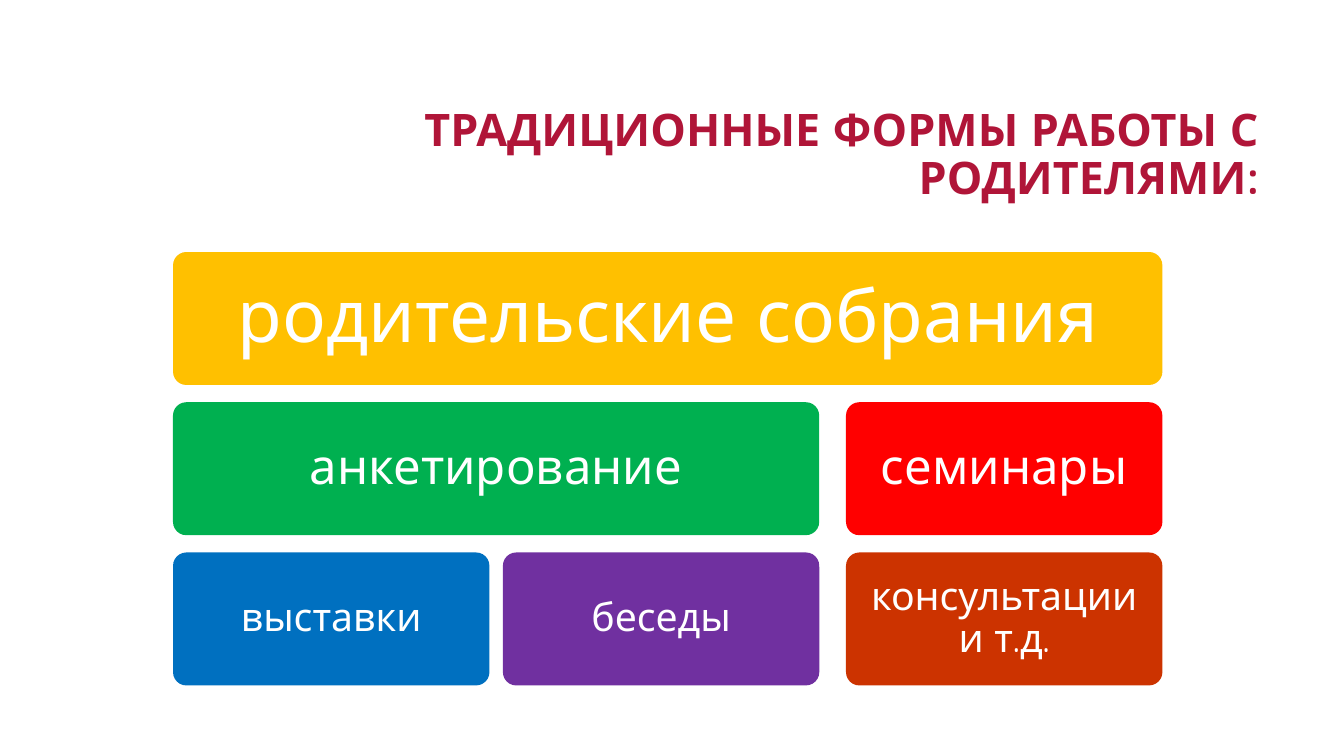
from dataclasses import dataclass

from pptx import Presentation
from pptx.dml.color import RGBColor
from pptx.enum.shapes import MSO_SHAPE
from pptx.enum.text import MSO_ANCHOR, PP_ALIGN
from pptx.slide import Slide
from pptx.text.text import TextFrame
from pptx.util import Pt

ROUNDED = MSO_SHAPE.ROUNDED_RECTANGLE
MIDDLE = MSO_ANCHOR.MIDDLE
CENTER, RIGHT = PP_ALIGN.CENTER, PP_ALIGN.RIGHT


@dataclass(frozen=True)
class Theme:
    font: str = "Quicksand"
    title_color: str = "B01538"
    block_text: str = "FFFFFF"
    title_size: float = 32
    level_sizes: tuple[float, ...] = (52, 35, 28)
    level_insets: tuple[float, ...] = (18.6, 13.6, 11.4)
    line_spacing: float = 0.9


@dataclass(frozen=True)
class Block:
    text: str
    level: int
    first_col: int
    last_col: int
    fill: str


THEME = Theme()

# Block grid, in points
COLUMN_LEFTS = (123.6, 359.2, 604.3)
COLUMN_WIDTH = 226
GRID_TOP = 180
ROW_HEIGHT = 95
ROW_PITCH = 107.3
CORNER = 0.1

BLOCKS = (
    Block("родительские собрания", 0, 0, 2, "FFC000"),
    Block("анкетирование", 1, 0, 1, "00B050"),
    Block("семинары", 1, 2, 2, "FF0000"),
    Block("выставки", 2, 0, 0, "0070C0"),
    Block("беседы", 2, 1, 1, "7030A0"),
    Block("консультации и т.д.", 2, 2, 2, "CC3300"),
)


def set_text(tf: TextFrame, text: str, size: float, color: str,
             align: PP_ALIGN, bold: bool = False) -> None:
    tf.text = text
    tf.word_wrap = True
    tf.vertical_anchor = MIDDLE
    p = tf.paragraphs[0]
    p.alignment = align
    p.line_spacing = THEME.line_spacing
    font = p.runs[0].font
    font.name = THEME.font
    font.size = Pt(size)
    font.bold = bold
    font.color.rgb = RGBColor.from_string(color)


def add_title(s: Slide, text: str) -> None:
    box = s.shapes.add_textbox(Pt(228.2), Pt(60.5), Pt(678.2), Pt(101.5))
    set_text(box.text_frame, text, THEME.title_size, THEME.title_color, RIGHT, bold=True)


def add_block(s: Slide, block: Block) -> None:
    left = COLUMN_LEFTS[block.first_col]
    width = COLUMN_LEFTS[block.last_col] + COLUMN_WIDTH - left
    top = GRID_TOP + block.level * ROW_PITCH
    sp = s.shapes.add_shape(ROUNDED, Pt(left), Pt(top), Pt(width), Pt(ROW_HEIGHT))
    sp.adjustments[0] = CORNER
    sp.shadow.inherit = False
    sp.fill.solid()
    sp.fill.fore_color.rgb = RGBColor.from_string(block.fill)
    sp.line.fill.background()
    tf = sp.text_frame
    inset = Pt(THEME.level_insets[block.level])
    tf.margin_left = tf.margin_right = tf.margin_top = tf.margin_bottom = inset
    set_text(tf, block.text, THEME.level_sizes[block.level], THEME.block_text, CENTER)


def main() -> None:
    prs = Presentation()
    prs.slide_width, prs.slide_height = Pt(960), Pt(540)
    s = prs.slides.add_slide(prs.slide_layouts[6])

    # Heading
    add_title(s, "ТРАДИЦИОННЫЕ ФОРМЫ РАБОТЫ С РОДИТЕЛЯМИ:")

    # Forms of work, from the widest block down
    for block in BLOCKS:
        add_block(s, block)

    prs.save("out.pptx")


if __name__ == "__main__":
    main()
